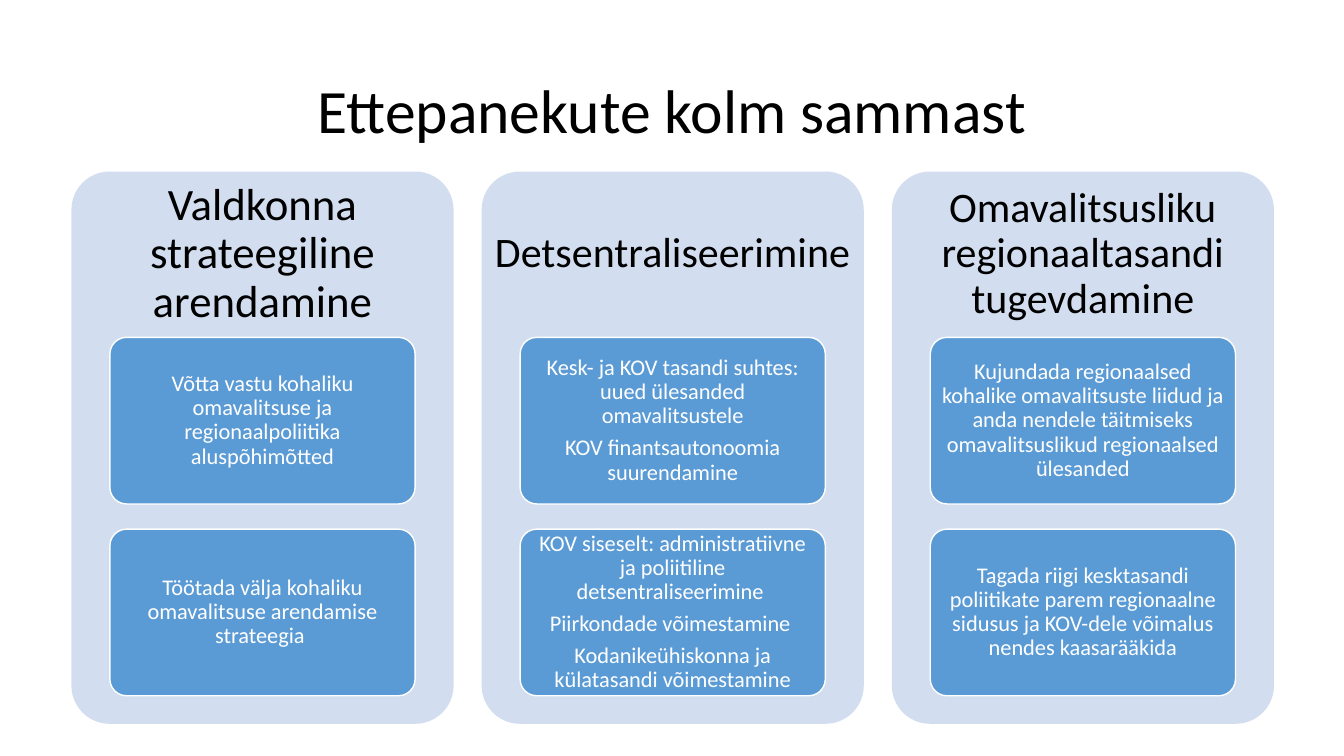
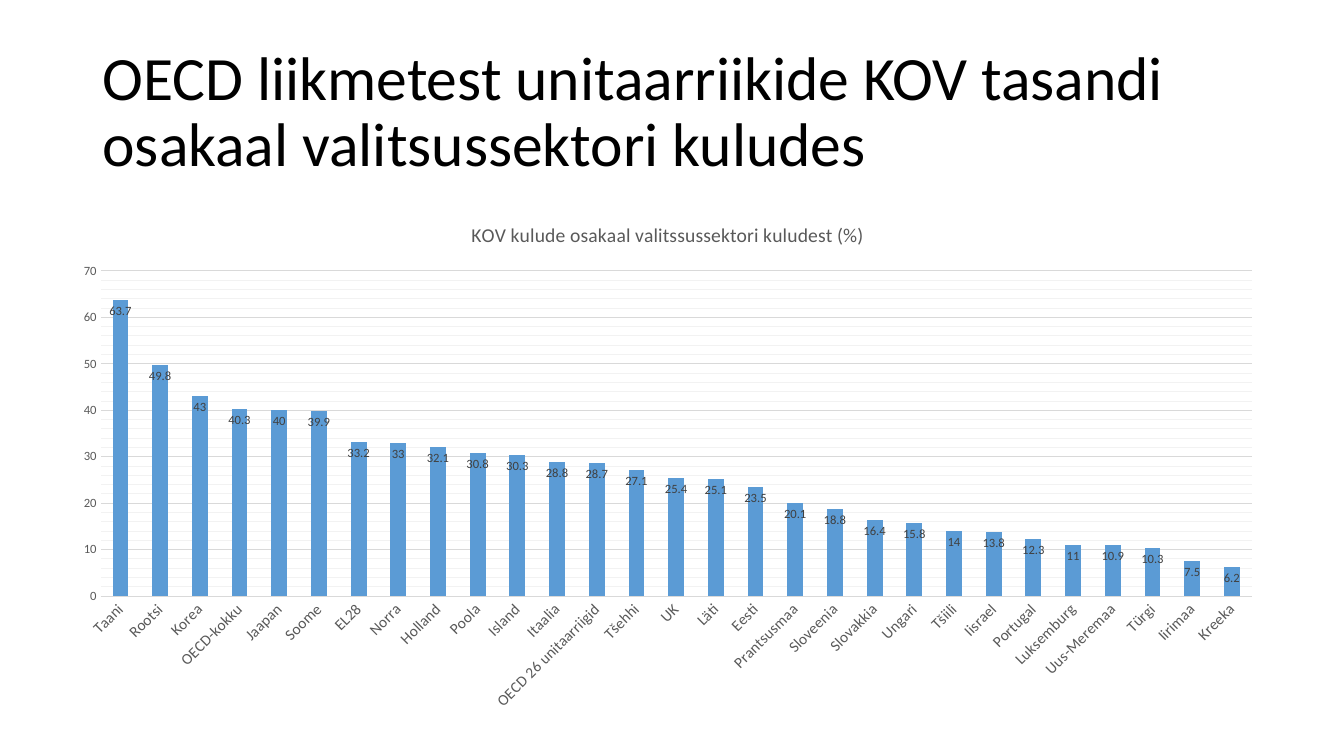
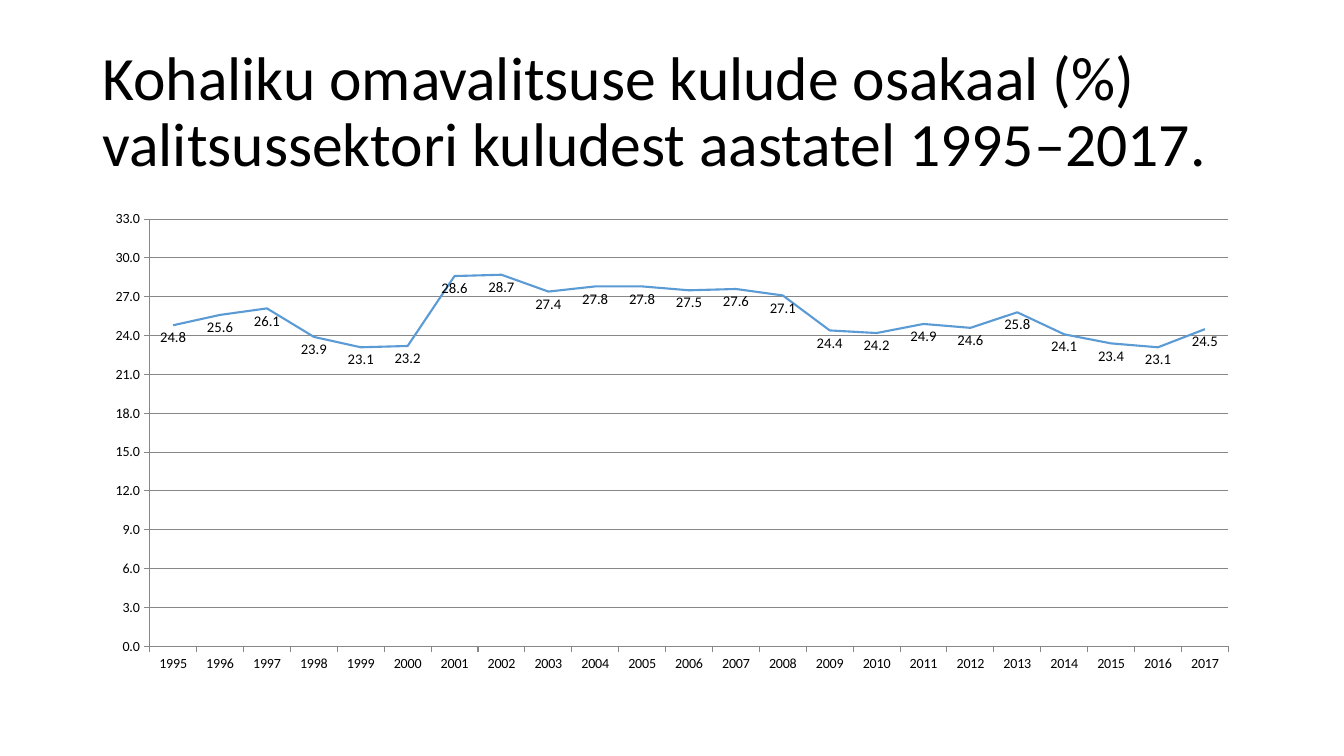
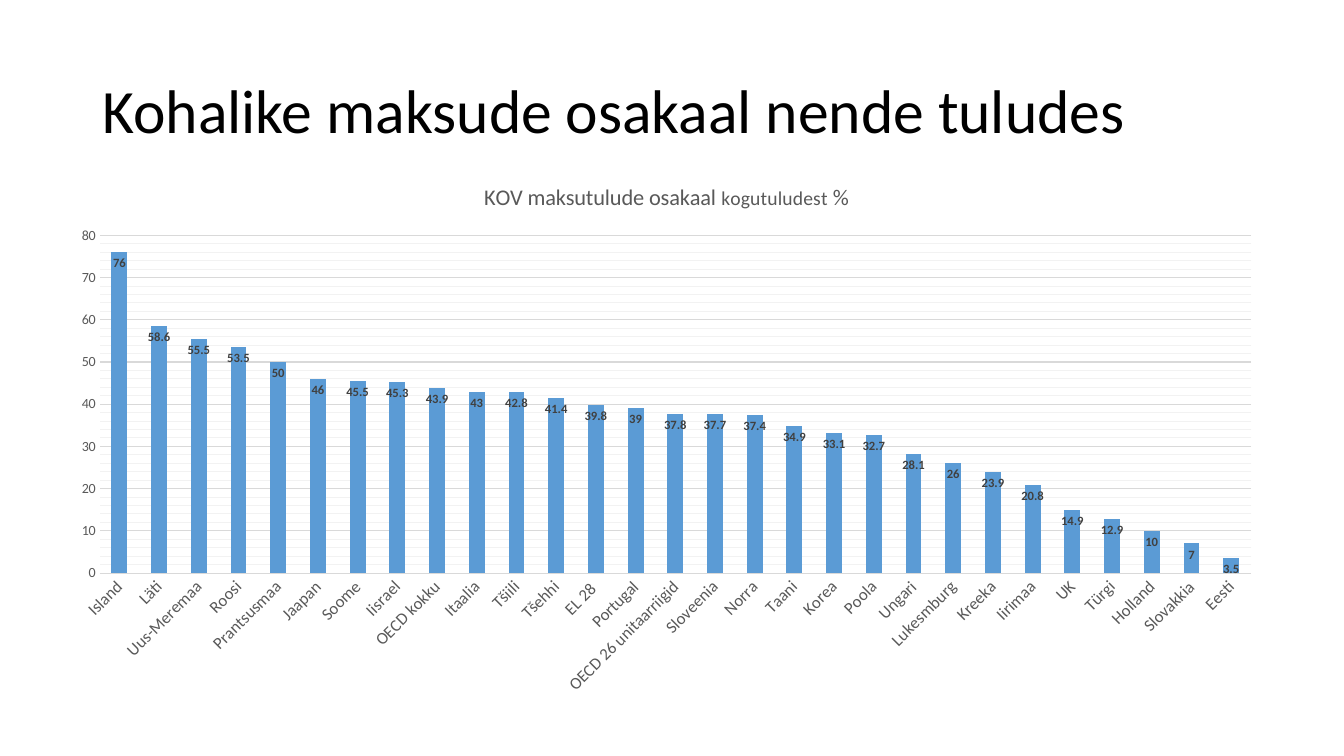
from lxml import etree
from pptx import Presentation
from pptx.chart.data import CategoryChartData
from pptx.dml.color import RGBColor
from pptx.enum import chart as charts, shapes, text
from pptx.oxml.ns import qn
from pptx.util import Pt

FONT = "Calibri"
COLORS = {
    "ink": "000000", "paper": "FFFFFF", "panel": "D2DEEF", "accent": "5B9BD5",
    "label": "404040", "muted": "595959", "grid": "D9D9D9", "minor": "F2F2F2",
    "axis": "878787",
}

PILLARS_TITLE = "Ettepanekute kolm sammast"
PILLARS = [
    ("Valdkonna strateegiline arendamine", 32, [
        ["Võtta vastu kohaliku omavalitsuse ja regionaalpoliitika aluspõhimõtted"],
        ["Töötada välja kohaliku omavalitsuse arendamise strateegia "],
    ]),
    ("Detsentraliseerimine", 30, [
        ["Kesk- ja KOV tasandi suhtes: uued ülesanded omavalitsustele",
         "KOV finantsautonoomia suurendamine"],
        ["KOV siseselt: administratiivne ja poliitiline detsentraliseerimine ",
         "Piirkondade võimestamine ",
         "Kodanikeühiskonna ja külatasandi võimestamine"],
    ]),
    ("Omavalitsusliku regionaaltasandi tugevdamine", 30, [
        ["Kujundada regionaalsed kohalike omavalitsuste liidud ja anda nendele "
         "täitmiseks omavalitsuslikud regionaalsed ülesanded"],
        ["Tagada riigi kesktasandi poliitikate parem regionaalne sidusus ja "
         "KOV-dele võimalus nendes kaasarääkida"],
    ]),
]

SPENDING = {
    "title": "OECD liikmetest unitaarriikide KOV tasandi osakaal valitsussektori kuludes",
    "frame": (42.5, 144, 869, 371),
    "heading": [("KOV kulude osakaal valitssussektori kuludest (%)", 14)],
    "series": "KOV kulude osakaal valitssussektori kuludest (%)",
    "sizes": (11, 9), "bold_labels": False, "top": 70,
    "points": [
        ("Taani", 63.7), ("Rootsi", 49.8), ("Korea", 43), ("OECD-kokku", 40.3),
        ("Jaapan", 40), ("Soome", 39.9), ("EL28", 33.2), ("Norra", 33),
        ("Holland", 32.1), ("Poola", 30.8), ("Island", 30.3), ("Itaalia", 28.8),
        ("OECD 26 unitaarriigid", 28.7), ("Tšehhi", 27.1), ("UK", 25.4),
        ("Läti", 25.1), ("Eesti", 23.5), ("Prantsusmaa", 20.1),
        ("Sloveenia", 18.8), ("Slovakkia", 16.4), ("Ungari", 15.8),
        ("Tšiili", 14), ("Iisrael", 13.8), ("Portugal", 12.3),
        ("Luksemburg", 11), ("Uus-Meremaa", 10.9), ("Türgi", 10.3),
        ("Iirimaa", 7.5), ("Kreeka", 6.2),
    ],
}

HISTORY = {
    "title": "Kohaliku omavalitsuse kulude osakaal (%) valitsussektori kuludest "
             "aastatel 1995‒2017.",
    "frame": (66, 144, 828, 343),
    "series": "Series 1",
    "first_year": 1995,
    "values": [24.8, 25.6, 26.1, 23.9, 23.1, 23.2, 28.6, 28.7, 27.4, 27.8, 27.8, 27.5,
               27.6, 27.1, 24.4, 24.2, 24.9, 24.6, 25.8, 24.1, 23.4, 23.1, 24.5],
}

TAXES = {
    "title": "Kohalike maksude osakaal nende tuludes",
    "frame": (41, 116.5, 870, 387.5),
    "heading": [("KOV maksutulude osakaal ", 16), ("kogutuludest", 14), (" %", 16)],
    "series": "Series 1",
    "sizes": (12, 10), "bold_labels": True, "top": 80,
    "points": [
        ("Island", 76), ("Läti", 58.6), ("Uus-Meremaa", 55.5), ("Roosi", 53.5),
        ("Prantsusmaa", 50), ("Jaapan", 46), ("Soome", 45.5), ("Iisrael", 45.3),
        ("OECD kokku", 43.9), ("Itaalia", 43), ("Tšiili", 42.8),
        ("Tšehhi", 41.4), ("EL 28 ", 39.8), ("Portugal", 39),
        ("OECD 26 unitaarriigid", 37.8), ("Sloveenia", 37.7), ("Norra", 37.4),
        ("Taani", 34.9), ("Korea", 33.1), ("Poola", 32.7), ("Ungari", 28.1),
        ("Lukesmburg", 26), ("Kreeka", 23.9), ("Iirimaa", 20.8), ("UK", 14.9),
        ("Türgi", 12.9), ("Holland", 10), ("Slovakkia", 7), ("Eesti", 3.5),
    ],
}

TITLE_FRAME = (66, 29, 828, 104)
PANEL_LEFT, PANEL_TOP, PANEL_STEP = 51, 122.5, 293
PANEL_WIDTH, PANEL_HEIGHT, HEADING_HEIGHT = 273, 394.5, 118
CARD_TOP, CARD_STEP, CARD_WIDTH, CARD_HEIGHT = 241, 137, 218, 119


def color(name):
    return RGBColor.from_string(COLORS[name])


def points(frame):
    return [Pt(length) for length in frame]


def set_font(font, size, name, bold=False):
    font.name, font.size, font.bold = FONT, Pt(size), bold
    font.color.rgb = color(name)


def set_line(line, name, width=0.75):
    line.color.rgb = color(name)
    line.width = Pt(width)


def add_titled_slide(deck, title, align=text.PP_ALIGN.LEFT):
    page = deck.slides.add_slide(deck.slide_layouts[5])
    box = page.shapes.title
    box.left, box.top, box.width, box.height = points(TITLE_FRAME)
    box.text_frame.text = title
    box.text_frame.auto_size = text.MSO_AUTO_SIZE.NONE
    box.text_frame.vertical_anchor = text.MSO_ANCHOR.MIDDLE
    para = box.text_frame.paragraphs[0]
    para.alignment, para.line_spacing = align, 0.9
    set_font(para.font, 44, "ink")
    return page


def write_centred(box, lines, size, name, margins):
    frame = box.text_frame
    frame.word_wrap = True
    frame.vertical_anchor = text.MSO_ANCHOR.MIDDLE
    frame.margin_left = frame.margin_right = Pt(margins[0])
    frame.margin_top = frame.margin_bottom = Pt(margins[1])
    frame.text = "\n".join(lines)
    for para in frame.paragraphs:
        para.alignment = text.PP_ALIGN.CENTER
        para.line_spacing = 0.9
        para.space_after = Pt(round(size * 0.35, 1))
        set_font(para.font, size, name)


def add_rounded(page, frame, fill, outline=None):
    box = page.shapes.add_shape(shapes.MSO_SHAPE.ROUNDED_RECTANGLE, *points(frame))
    box.adjustments[0] = 0.1
    box.shadow.inherit = False
    box.fill.solid()
    box.fill.fore_color.rgb = color(fill)
    if outline:
        set_line(box.line, outline, 1)
    else:
        box.line.fill.background()
    return box


def add_pillars(deck):
    page = add_titled_slide(deck, PILLARS_TITLE, text.PP_ALIGN.CENTER)
    for column, (heading, size, cards) in enumerate(PILLARS):
        left = PANEL_LEFT + column * PANEL_STEP
        add_rounded(page, (left, PANEL_TOP, PANEL_WIDTH, PANEL_HEIGHT), "panel")
        box = page.shapes.add_textbox(
            *points((left, PANEL_TOP, PANEL_WIDTH, HEADING_HEIGHT)))
        write_centred(box, [heading], size, "ink", (8, 8))
        card_left = left + (PANEL_WIDTH - CARD_WIDTH) / 2
        for row, lines in enumerate(cards):
            top = CARD_TOP + row * CARD_STEP
            card = add_rounded(page, (card_left, top, CARD_WIDTH, CARD_HEIGHT),
                               "accent", "paper")
            write_centred(card, lines, 16, "paper", (3, 2))


def add_plain_chart(page, kind, content, categories, values):
    data = CategoryChartData()
    data.categories = categories
    data.add_series(content["series"], values)
    chart = page.shapes.add_chart(kind, *points(content["frame"]), data).chart
    set_font(chart.font, 10, "ink")
    chart.has_legend = False
    chart.has_title = False
    chart.plots[0].vary_by_categories = False
    chart.value_axis.minimum_scale = 0
    chart.value_axis.has_major_gridlines = True
    return chart


def add_labels(plot, position, size, name, number_format, bold=False):
    plot.has_data_labels = True
    labels = plot.data_labels
    labels.show_value = True
    labels.position = position
    labels.number_format = number_format
    labels.number_format_is_linked = False
    set_font(labels.font, size, name, bold)


def add_minor_gridlines(axis, name):
    axis.has_minor_gridlines = True
    parent = axis._element.find(qn("c:minorGridlines"))
    for tag in ("c:spPr", "a:ln", "a:solidFill", "a:srgbClr"):
        parent = etree.SubElement(parent, qn(tag))
        if tag == "a:ln":
            parent.set("w", str(Pt(0.75)))
    parent.set("val", COLORS[name])


def add_column_slide(deck, content):
    page = add_titled_slide(deck, content["title"])
    categories, values = zip(*content["points"])
    chart = add_plain_chart(page, charts.XL_CHART_TYPE.COLUMN_STACKED, content,
                            categories, values)
    chart.has_title = True
    para = chart.chart_title.text_frame.paragraphs[0]
    for words, size in content["heading"]:
        span = para.add_run()
        span.text = words
        set_font(span.font, size, "muted")

    plot = chart.plots[0]
    plot.gap_width, plot.overlap = 150, 100
    fill = plot.series[0].format.fill
    fill.solid()
    fill.fore_color.rgb = color("accent")
    add_labels(plot, charts.XL_LABEL_POSITION.INSIDE_END, 9, "label", "General",
               content["bold_labels"])

    names, scale = chart.category_axis, chart.value_axis
    for axis, size in zip((names, scale), content["sizes"]):
        axis.major_tick_mark = charts.XL_TICK_MARK.NONE
        set_font(axis.tick_labels.font, size, "muted")
    set_line(names.format.line, "grid")
    names._element.find(qn("c:txPr")).find(qn("a:bodyPr")).set("rot", "-2700000")
    scale.format.line.fill.background()
    scale.maximum_scale, scale.major_unit, scale.minor_unit = content["top"], 10, 2
    set_line(scale.major_gridlines.format.line, "grid")
    add_minor_gridlines(scale, "minor")


def add_history_slide(deck):
    page = add_titled_slide(deck, HISTORY["title"])
    values = HISTORY["values"]
    years = [str(HISTORY["first_year"] + step) for step in range(len(values))]
    chart = add_plain_chart(page, charts.XL_CHART_TYPE.LINE, HISTORY, years, values)
    series = chart.plots[0].series[0]
    series.smooth = False
    series.marker.style = charts.XL_MARKER_STYLE.NONE
    set_line(series.format.line, "accent", 1.5)
    add_labels(chart.plots[0], charts.XL_LABEL_POSITION.BELOW, 10.5, "ink", "0.0")

    scale = chart.value_axis
    scale.maximum_scale, scale.major_unit = 33, 3
    scale.tick_labels.number_format = "0.0"
    scale.tick_labels.number_format_is_linked = False
    set_line(scale.major_gridlines.format.line, "axis")
    for axis in (chart.category_axis, scale):
        axis.major_tick_mark = charts.XL_TICK_MARK.OUTSIDE
        set_line(axis.format.line, "axis")


def main():
    deck = Presentation()
    deck.slide_width, deck.slide_height = Pt(960), Pt(540)
    add_pillars(deck)
    add_column_slide(deck, SPENDING)
    add_history_slide(deck)
    add_column_slide(deck, TAXES)
    deck.save("out.pptx")


if __name__ == "__main__":
    main()
